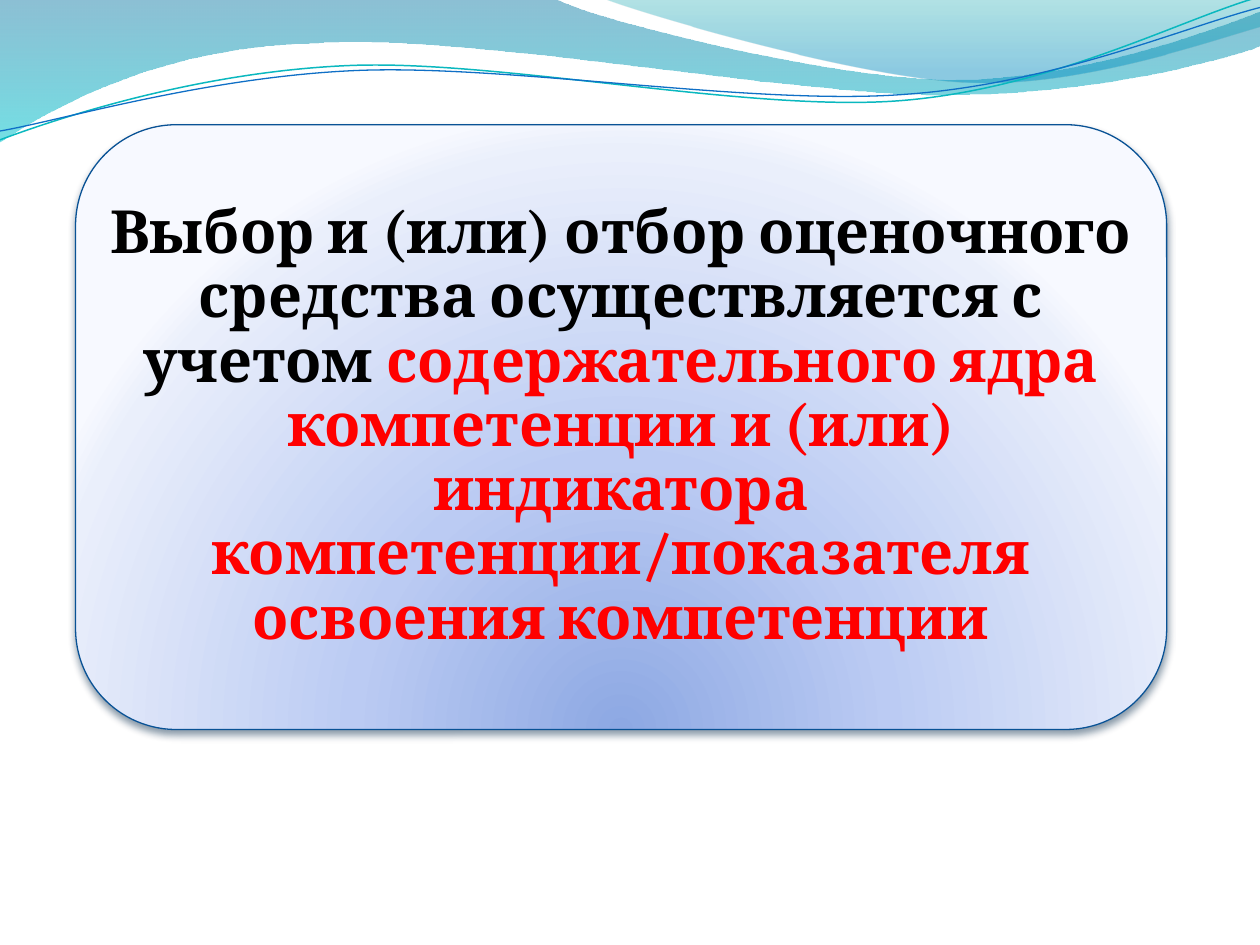
"""Build a slide with a wave header and a rounded card holding one statement."""
from math import cos, radians, sin

from lxml.etree import SubElement
from pptx import Presentation
from pptx.dml.color import RGBColor
from pptx.enum.shapes import MSO_SHAPE
from pptx.enum.text import MSO_ANCHOR, PP_ALIGN
from pptx.oxml.ns import qn
from pptx.util import Inches, Pt

STATEMENT = [
    ("Выбор и (или) отбор оценочного средства осуществляется с учетом ", "000000"),
    ("содержательного ядра компетенции и (или) индикатора "
     "компетенции/показателя освоения компетенции", "FF0000"),
]
CARD = (0.6, 0.99, 8.66, 4.8)
CARD_STOPS = [(0, "8DA8E3", 100), (43, "BBCBF3", 100),
              (93, "EAEFFB", 100), (100, "F7F9FF", 100)]
CARD_FOCUS = {"l": 50, "t": 130, "r": 50, "b": -30}

BANDS = [
    {"start": (0, 0),
     "steps": [[(4.4, -0.01)],
               [(4.76, 0.17), (6.64, 0.63), (7.58, 0.63)],
               [(8.53, 0.63), (9.58, 0.26), (10, 0.09)],
               [(10.01, 0.36)],
               [(9.83, 0.44), (8.7, 0.76), (7.46, 0.75)],
               [(6.22, 0.75), (3.82, 0.28), (2.57, 0.34)],
               [(1.29, 0.36), (0.46, 0.83), (-0.01, 1.13)],
               [(0, 0)]],
     "stops": [(0, "0074A1", 45), (100, "00C6CF", 55)]},
    {"start": (4.79, -0.01),
     "steps": [[(5.09, 0.11), (6.82, 0.62), (7.69, 0.65)],
               [(8.56, 0.69), (9.61, 0.32), (10, 0.21)],
               [(10, 0)],
               [(4.79, -0.01)]],
     "stops": [(0, "00A1A9", 30), (80, "008BBF", 45)]},
]
STRANDS = [
    {"start": (0, 1.11),
     "steps": [[(0.48, 0.93), (1.58, 0.57), (2.77, 0.52)],
               [(3.95, 0.47), (5.93, 0.89), (7.13, 0.8)],
               [(8.33, 0.71), (9.38, 0.15), (9.98, -0.02)]],
     "center": (4.99, 0.58), "line": ("0AB8BF", 0.85)},
    {"start": (0, 1.04),
     "steps": [[(0.47, 0.96), (1.64, 0.61), (2.83, 0.56)],
               [(4.03, 0.51), (5.97, 0.84), (7.17, 0.75)],
               [(8.36, 0.67), (9.41, 0.21), (10, 0.06)]],
     "center": (5, 0.59), "line": ("0F6FC6", 0.75)},
]
STRAND_TILT = 2.7


def color(value):
    return RGBColor.from_string(value)


def add_color(parent, value, alpha):
    node = SubElement(parent, qn("a:srgbClr"), val=value)
    if alpha < 100:
        SubElement(node, qn("a:alpha"), val=str(alpha * 1000))


def set_gradient(shape, stops, focus=None):
    shape.fill.background()
    properties = shape.element.spPr
    gradient = SubElement(properties, qn("a:gradFill"), rotWithShape="1")
    properties.replace(properties.find(qn("a:noFill")), gradient)
    stop_list = SubElement(gradient, qn("a:gsLst"))
    for position, value, alpha in stops:
        stop = SubElement(stop_list, qn("a:gs"), pos=str(position * 1000))
        add_color(stop, value, alpha)
    if focus:
        circle = SubElement(gradient, qn("a:path"), path="circle")
        SubElement(circle, qn("a:fillToRect"),
                   {side: str(share * 1000) for side, share in focus.items()})
    else:
        SubElement(gradient, qn("a:lin"), ang="5400000", scaled="0")


def set_line(shape, value, width):
    shape.line.color.rgb = color(value)
    shape.line.width = Pt(width)


def turn(point, center, degrees):
    angle = radians(degrees)
    x, y = point[0] - center[0], point[1] - center[1]
    return (center[0] + x * cos(angle) - y * sin(angle),
            center[1] + x * sin(angle) + y * cos(angle))


def add_curve(page, start, steps, close):
    points = [(Inches(x), Inches(y)) for step in steps for x, y in step]
    builder = page.shapes.build_freeform(Inches(start[0]), Inches(start[1]))
    builder.add_line_segments(points, close=close)
    shape = builder.convert_to_shape()
    shape.shadow.inherit = False
    segments = iter(list(shape.element.iter(qn("a:lnTo"))))
    for step in steps:
        group = [next(segments) for _ in step]
        if len(group) == 3:
            outline = group[0].getparent()
            curve = SubElement(outline, qn("a:cubicBezTo"))
            outline.replace(group[0], curve)
            for segment in group:
                curve.append(segment[0])
            for segment in group[1:]:
                outline.remove(segment)
    return shape


def add_waves(page):
    for band in BANDS:
        shape = add_curve(page, band["start"], band["steps"], True)
        set_gradient(shape, band["stops"])
        shape.line.fill.background()
    for strand in STRANDS:
        center = strand["center"]
        start = turn(strand["start"], center, STRAND_TILT)
        steps = [[turn(point, center, STRAND_TILT) for point in step]
                 for step in strand["steps"]]
        shape = add_curve(page, start, steps, False)
        shape.rotation = -STRAND_TILT
        shape.fill.background()
        set_line(shape, *strand["line"])


def add_card(page):
    place = [Inches(length) for length in CARD]
    card = page.shapes.add_shape(MSO_SHAPE.ROUNDED_RECTANGLE, *place)
    set_gradient(card, CARD_STOPS, CARD_FOCUS)
    set_line(card, "095295", 0.75)
    card.shadow.inherit = False
    shadow = SubElement(card.element.spPr.find(qn("a:effectLst")), qn("a:outerShdw"),
                        blurRad=str(Pt(4.5)), dist=str(Pt(3)), dir="5400000",
                        rotWithShape="0")
    add_color(shadow, "042747", 48)

    frame = page.shapes.add_textbox(*place).text_frame
    frame.word_wrap = True
    frame.vertical_anchor = MSO_ANCHOR.MIDDLE
    frame.margin_left = frame.margin_right = Inches(0.14)
    frame.margin_top = frame.margin_bottom = Inches(0.07)
    para = frame.paragraphs[0]
    para.alignment = PP_ALIGN.CENTER
    para.line_spacing = 0.9
    for text, value in STATEMENT:
        span = para.add_run()
        span.text = text
        span.font.name = "Cambria"
        span.font.size = Pt(34)
        span.font.bold = True
        span.font.color.rgb = color(value)


def main():
    deck = Presentation()
    deck.slide_width, deck.slide_height = Inches(10), Inches(7.5)
    page = deck.slides.add_slide(deck.slide_layouts[6])
    add_waves(page)
    add_card(page)
    deck.save("out.pptx")


if __name__ == "__main__":
    main()
